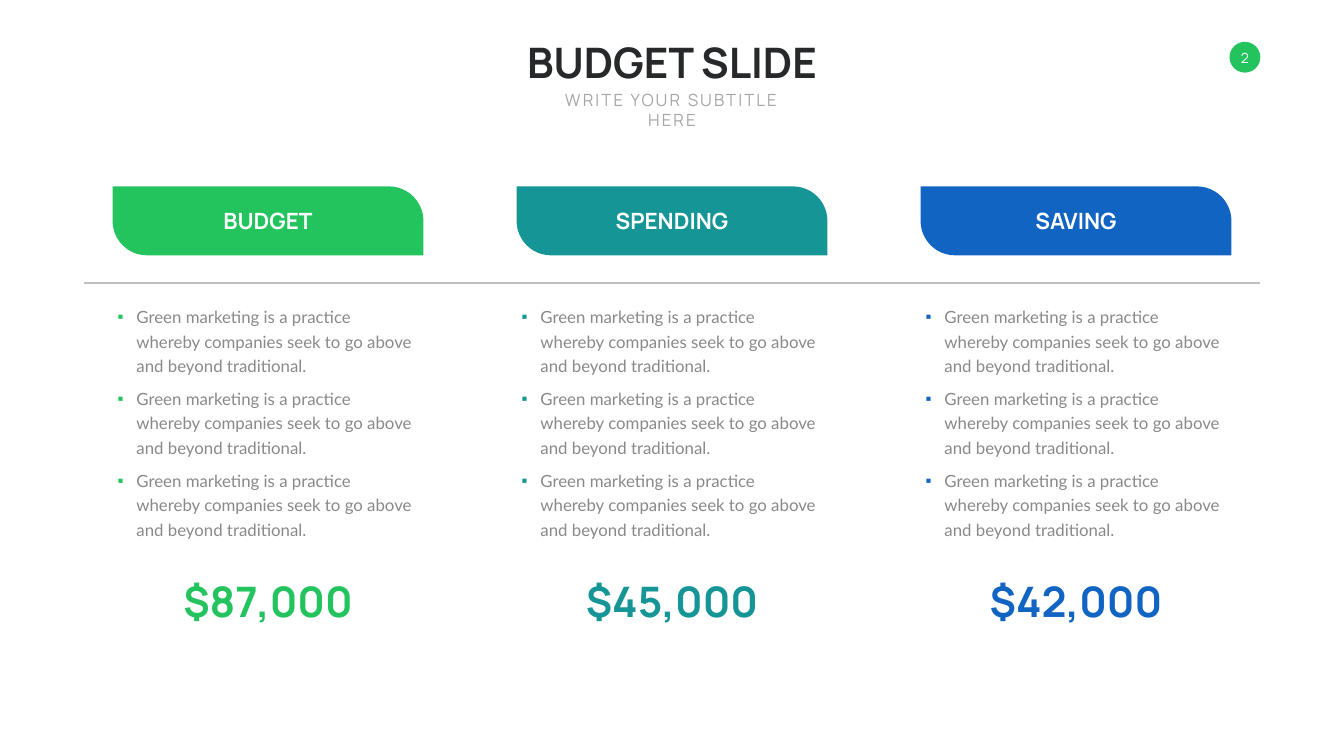
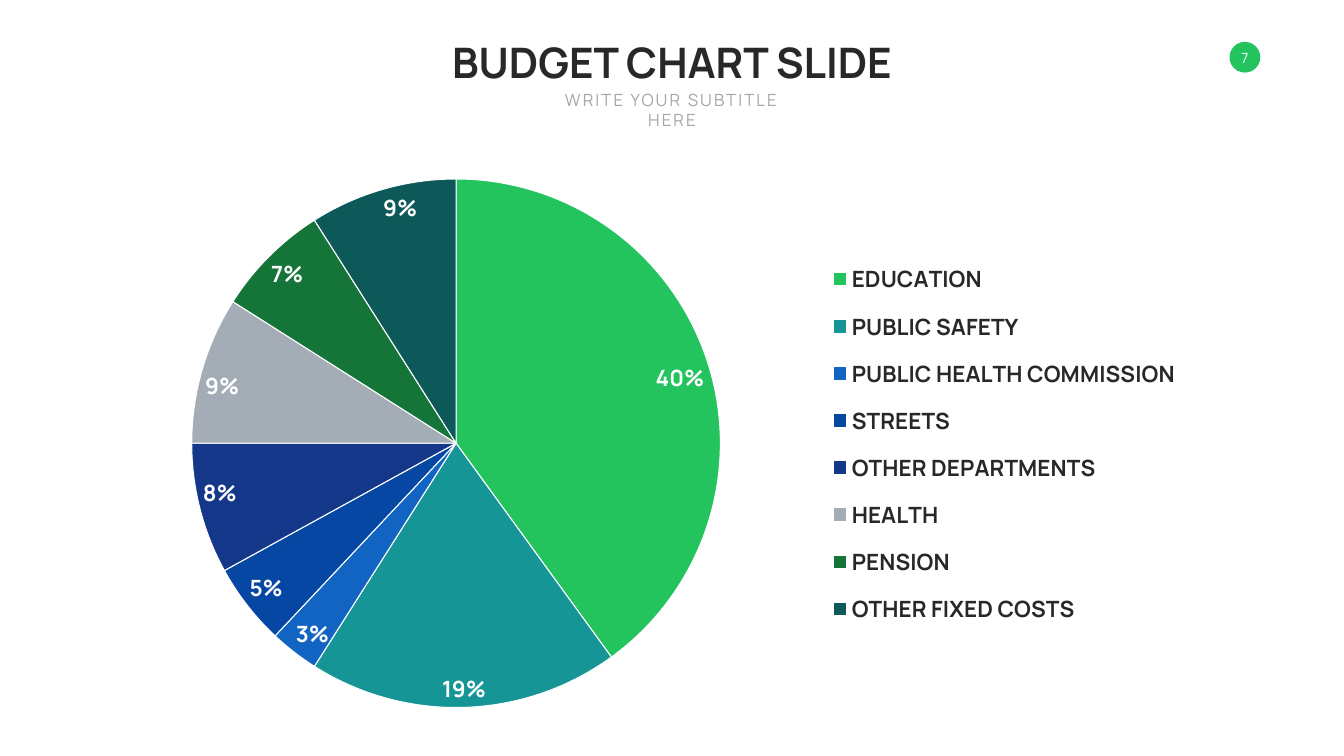
from lxml import etree
from pptx import Presentation
from pptx.chart.data import CategoryChartData
from pptx.dml.color import RGBColor
from pptx.enum.chart import XL_CHART_TYPE, XL_LABEL_POSITION, XL_LEGEND_POSITION
from pptx.enum.shapes import MSO_CONNECTOR, MSO_SHAPE
from pptx.enum.text import MSO_ANCHOR, MSO_AUTO_SIZE, PP_ALIGN
from pptx.oxml import parse_xml
from pptx.oxml.ns import nsdecls, qn
from pptx.util import Pt

GREEN = RGBColor(0x23, 0xC3, 0x5E)
TEAL = RGBColor(0x15, 0x95, 0x96)
BLUE = RGBColor(0x12, 0x64, 0xC3)
ROYAL = RGBColor(0x05, 0x47, 0xA3)
NAVY = RGBColor(0x15, 0x37, 0x89)
SILVER = RGBColor(0xA4, 0xAC, 0xB5)
FOREST = RGBColor(0x15, 0x75, 0x38)
PINE = RGBColor(0x0D, 0x59, 0x5A)
WHITE = RGBColor(0xFF, 0xFF, 0xFF)
INK = RGBColor(0x27, 0x28, 0x29)
SUBTITLE_GRAY = RGBColor(0xA6, 0xA6, 0xA6)
BODY_GRAY = RGBColor(0x89, 0x89, 0x89)
RULE_GRAY = RGBColor(0xBF, 0xBF, 0xBF)
HEADING_FONT = "Manrope"
BODY_FONT = "Lato"
BULLET_FONT = "Arial"
WIDTH, HEIGHT = 1919.52, 1080
CENTER = WIDTH / 2


def write(box, center, top, width, height, text, size, color, bold=False, anchor=MSO_ANCHOR.TOP):
    box.left, box.top = Pt(center - width / 2), Pt(top)
    box.width, box.height = Pt(width), Pt(height)
    frame = box.text_frame
    frame.word_wrap = False
    frame.auto_size = MSO_AUTO_SIZE.SHAPE_TO_FIT_TEXT
    frame.vertical_anchor = anchor
    para = frame.paragraphs[0]
    para.alignment = PP_ALIGN.CENTER
    span = para.add_run()
    span.text = text
    span.font.name = HEADING_FONT
    span.font.size = Pt(size)
    span.font.bold = bold
    span.font.color.rgb = color
    return span


def set_layout(element, position, **percents):
    for old in element.findall(qn("c:layout")):
        element.remove(old)
    layout = parse_xml(f"<c:layout {nsdecls('c')}><c:manualLayout/></c:layout>")
    manual = layout[0]
    if position == 0:
        etree.SubElement(manual, qn("c:layoutTarget")).set("val", "inner")
    for mode in ("xMode", "yMode"):
        etree.SubElement(manual, qn(f"c:{mode}")).set("val", "edge")
    for name, percent in percents.items():
        etree.SubElement(manual, qn(f"c:{name}")).set("val", str(percent / 100))
    element.insert(position, layout)


deck = Presentation()
deck.slide_width, deck.slide_height = Pt(WIDTH), Pt(HEIGHT)

pages = []
for title, title_width, number in (("BUDGET SLIDE", 430, "2"), ("BUDGET CHART SLIDE", 653, "7")):
    page = deck.slides.add_slide(deck.slide_layouts[5])
    pages.append(page)
    write(page.shapes.title, CENTER, 48, title_width, 80, title, 60, INK, True)

    badge = page.shapes.add_shape(MSO_SHAPE.OVAL, Pt(1756), Pt(59.75), Pt(44), Pt(44))
    badge.shadow.inherit = False
    badge.fill.solid()
    badge.fill.fore_color.rgb = GREEN
    badge.line.fill.background()

    box = page.shapes.add_textbox(0, 0, 0, 0)
    write(box, 1778, 70, 30, 24, number, 20, WHITE, anchor=MSO_ANCHOR.MIDDLE)
    frame = box.text_frame
    frame.margin_left = frame.margin_right = frame.margin_top = frame.margin_bottom = 0

    box = page.shapes.add_textbox(0, 0, 0, 0)
    span = write(box, CENTER, 124, 391, 36, "WRITE YOUR SUBTITLE HERE", 24, SUBTITLE_GRAY)
    span.font._element.set("spc", "300")
    box.text_frame.word_wrap = True

budget_page, chart_page = pages

rule = budget_page.shapes.add_connector(MSO_CONNECTOR.STRAIGHT, Pt(119.5), Pt(404.5), Pt(1800), Pt(404.5))
rule.line.color.rgb = RULE_GRAY
rule.line.width = Pt(3)
etree.SubElement(rule._element.spPr, qn("a:effectLst"))

COLUMN_WIDTH, COLUMN_STEP = 444, 577
BULLET_TEXT = "Green marketing is a practice whereby companies seek to go above and beyond traditional."
columns = (
    ("BUDGET", 143, "$87,000", 262, GREEN),
    ("SPENDING", 179, "$45,000", 271, TEAL),
    ("SAVING", 140, "$42,000", 266, BLUE),
)
for index, (heading, heading_width, amount, amount_width, color) in enumerate(columns):
    center = CENTER + (index - 1) * COLUMN_STEP
    left = center - COLUMN_WIDTH / 2

    band = budget_page.shapes.add_shape(
        MSO_SHAPE.ROUND_2_DIAG_RECTANGLE, Pt(left), Pt(266.25), Pt(COLUMN_WIDTH), Pt(98.5))
    band.adjustments[0] = 0
    band.adjustments[1] = 0.5
    band.shadow.inherit = False
    band.fill.solid()
    band.fill.fore_color.rgb = color
    band.line.fill.background()

    box = budget_page.shapes.add_textbox(0, 0, 0, 0)
    write(box, center, 292.5, heading_width, 46, heading, 32, WHITE, True, MSO_ANCHOR.MIDDLE)

    box = budget_page.shapes.add_textbox(Pt(left), Pt(428.5), Pt(COLUMN_WIDTH), Pt(345.5))
    frame = box.text_frame
    frame.word_wrap = True
    frame.margin_right = Pt(10)
    frame.auto_size = MSO_AUTO_SIZE.SHAPE_TO_FIT_TEXT
    for row in range(3):
        para = frame.add_paragraph() if row else frame.paragraphs[0]
        properties = para._p.get_or_add_pPr()
        properties.set("marL", str(Pt(27)))
        properties.set("indent", str(-Pt(27)))
        bullet_color = etree.SubElement(properties, qn("a:buClr"))
        etree.SubElement(bullet_color, qn("a:srgbClr")).set("val", str(color))
        etree.SubElement(properties, qn("a:buFont")).set("typeface", BULLET_FONT)
        etree.SubElement(properties, qn("a:buChar")).set("char", "▪")
        para.line_spacing = Pt(35)
        para.space_before = Pt(12 if row else 0)
        span = para.add_run()
        span.text = BULLET_TEXT
        span.font.name = BODY_FONT
        span.font.size = Pt(24)
        span.font.color.rgb = BODY_GRAY

    box = budget_page.shapes.add_textbox(0, 0, 0, 0)
    write(box, center, 818, amount_width, 80, amount, 60, color, True, MSO_ANCHOR.MIDDLE)

departments = (
    ("EDUCATION", 40, GREEN),
    ("PUBLIC SAFETY", 19, TEAL),
    ("PUBLIC HEALTH COMMISSION", 3, BLUE),
    ("STREETS", 5, ROYAL),
    ("OTHER DEPARTMENTS", 8, NAVY),
    ("HEALTH", 9, SILVER),
    ("PENSION", 7, FOREST),
    ("OTHER FIXED COSTS", 9, PINE),
)
data = CategoryChartData()
data.categories = [name for name, share, color in departments]
data.add_series("Series 1", [share for name, share, color in departments])
chart = chart_page.shapes.add_chart(
    XL_CHART_TYPE.PIE, Pt(122.5), Pt(245.5), Pt(1573), Pt(774), data).chart
chart.has_title = False
chart.has_legend = True
chart.legend.position = XL_LEGEND_POSITION.RIGHT
chart.legend.include_in_layout = False

plot = chart.plots[0]
plot.vary_by_categories = True
plot.has_data_labels = True
labels = plot.data_labels
labels.show_percentage = True
labels.show_value = False
labels.number_format = "0%"
labels.number_format_is_linked = False
labels.position = XL_LABEL_POSITION.INSIDE_END

for font, color in ((chart.font, INK), (chart.legend.font, INK), (labels.font, WHITE)):
    font.name = HEADING_FONT
    font.size = Pt(32)
    font.bold = True
    font.color.rgb = color

for index, (name, share, color) in enumerate(departments):
    wedge = plot.series[0].points[index].format
    wedge.fill.solid()
    wedge.fill.fore_color.rgb = color
    wedge.line.color.rgb = WHITE
    wedge.line.width = Pt(1.5)

chart_area = chart._chartSpace.find(qn("c:chart"))
set_layout(chart_area.find(qn("c:plotArea")), 0, x=9.62, y=1.1, w=48, h=98)
set_layout(chart_area.find(qn("c:legend")), 1, x=66.9, y=14, w=33, h=72.5)

deck.save("out.pptx")
